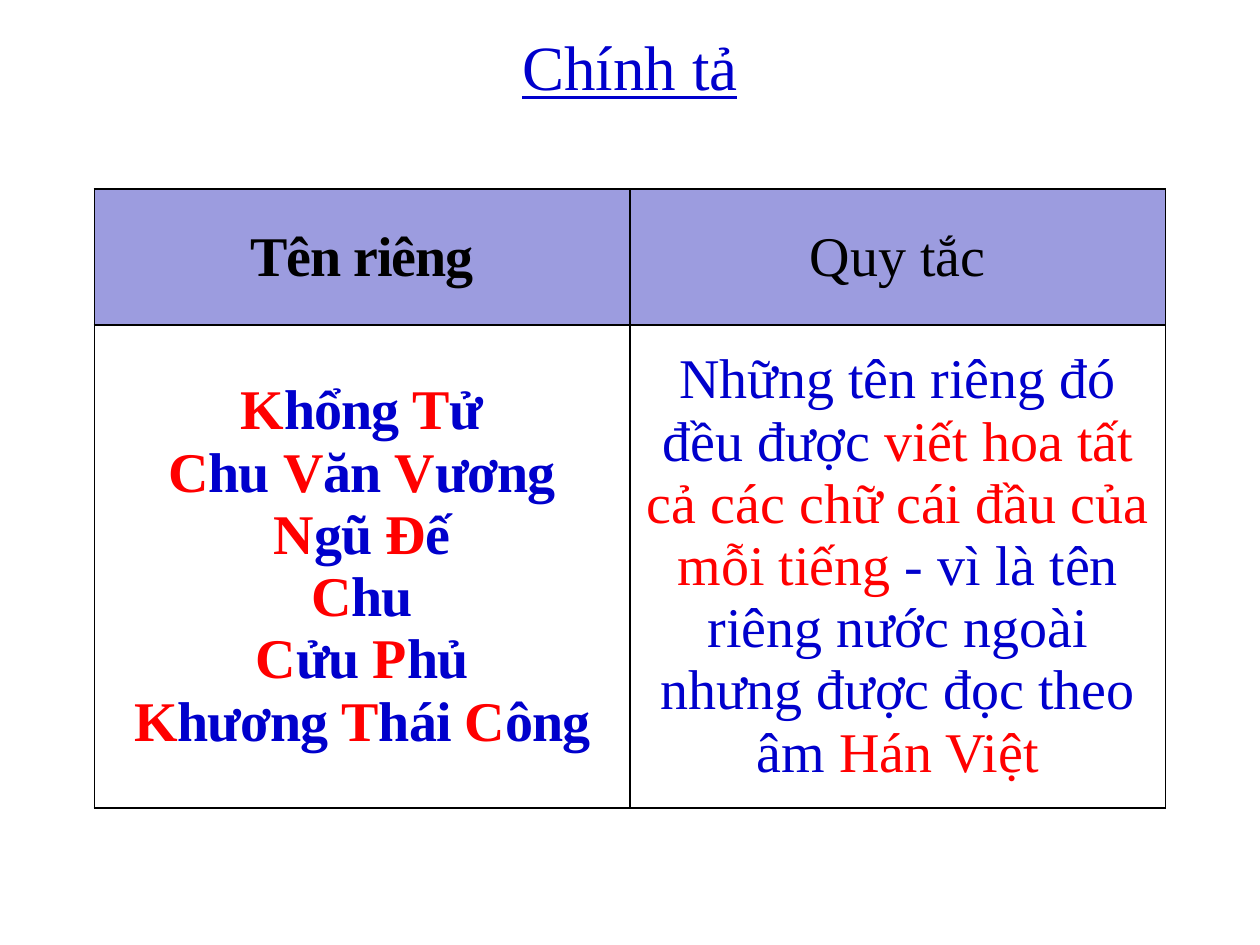
from itertools import groupby

from lxml.etree import SubElement
from pptx import Presentation
from pptx.dml.color import RGBColor
from pptx.enum.text import MSO_ANCHOR as Anchor, MSO_AUTO_SIZE as AutoSize, PP_ALIGN as Align
from pptx.oxml.ns import qn
from pptx.util import Cm, Pt

FONT = "Times New Roman"
BLACK, BLUE, RED = "000000", "0000CC", "FF0000"
HEADER_FILL, BODY_FILL = "9C9CDF", "FFFFFF"

NAMES = ["Khổng Tử", "Chu Văn Vương", "Ngũ Đế", "Chu", "Cửu Phủ", "Khương Thái Công"]
RULE = [
    ("Những tên riêng đó đều được ", BLUE),
    ("viết hoa tất cả các chữ cái đầu của mỗi tiếng ", RED),
    ("- vì là tên riêng nước ngoài nhưng được đọc theo âm ", BLUE),
    ("Hán Việt", RED),
]


def color(value):
    return RGBColor.from_string(value)


def highlight_capitals(name):
    """Split a name into spans, with its capital letters in red."""
    return [("".join(letters), RED if upper else BLUE)
            for upper, letters in groupby(name, str.isupper)]


def write_para(para, spans, size, bold=False):
    para.alignment = Align.CENTER
    para.font.name, para.font.size, para.font.bold = FONT, Pt(size), bold
    for text, hue in spans:
        span = para.add_run()
        span.text = text
        span.font.color.rgb = color(hue)
        if bold:
            span.font._element.set("spc", "-60")


def draw_borders(cell):
    properties = cell._tc.get_or_add_tcPr()
    for side in ("a:lnL", "a:lnR", "a:lnT", "a:lnB"):
        line = SubElement(properties, qn(side), w=str(Pt(1)))
        fill = SubElement(line, qn("a:solidFill"))
        SubElement(fill, qn("a:srgbClr"), val=BLACK)


def fill_cell(cell, paras, background, bold):
    draw_borders(cell)
    cell.fill.solid()
    cell.fill.fore_color.rgb = color(background)
    cell.vertical_anchor = Anchor.MIDDLE
    frame = cell.text_frame
    for index, spans in enumerate(paras):
        para = frame.add_paragraph() if index else frame.paragraphs[0]
        write_para(para, spans, 32, bold)


def place_title(page, left, top, width, height):
    title = page.shapes.title
    title.left, title.top, title.width, title.height = left, top, width, height
    frame = title.text_frame
    frame.auto_size = AutoSize.NONE
    frame.vertical_anchor = Anchor.MIDDLE
    para = frame.paragraphs[0]
    write_para(para, [("Chính tả", BLUE)], 36)
    para.runs[0].font.underline = True


def place_rule_table(page, left, top, width, height):
    table = page.shapes.add_table(2, 2, left, top, width, height).table
    header_height = round(height * 0.22)
    table.rows[0].height = header_height
    table.rows[1].height = height - header_height
    columns = [
        ("Tên riêng", [highlight_capitals(name) for name in NAMES], True),
        ("Quy tắc", [RULE], False),
    ]
    for index, (heading, paras, bold) in enumerate(columns):
        fill_cell(table.cell(0, index), [[(heading, BLACK)]], HEADER_FILL, bold)
        fill_cell(table.cell(1, index), paras, BODY_FILL, bold)


def main():
    deck = Presentation()
    deck.slide_width, deck.slide_height = Cm(25.4), Cm(19.05)
    page = deck.slides.add_slide(deck.slide_layouts[5])
    place_title(page, Cm(1.27), Cm(0.64), Cm(22.86), Cm(1.35))
    place_rule_table(page, Cm(1.9), Cm(3.81), Cm(21.6), Cm(12.48))
    deck.save("out.pptx")


if __name__ == "__main__":
    main()
